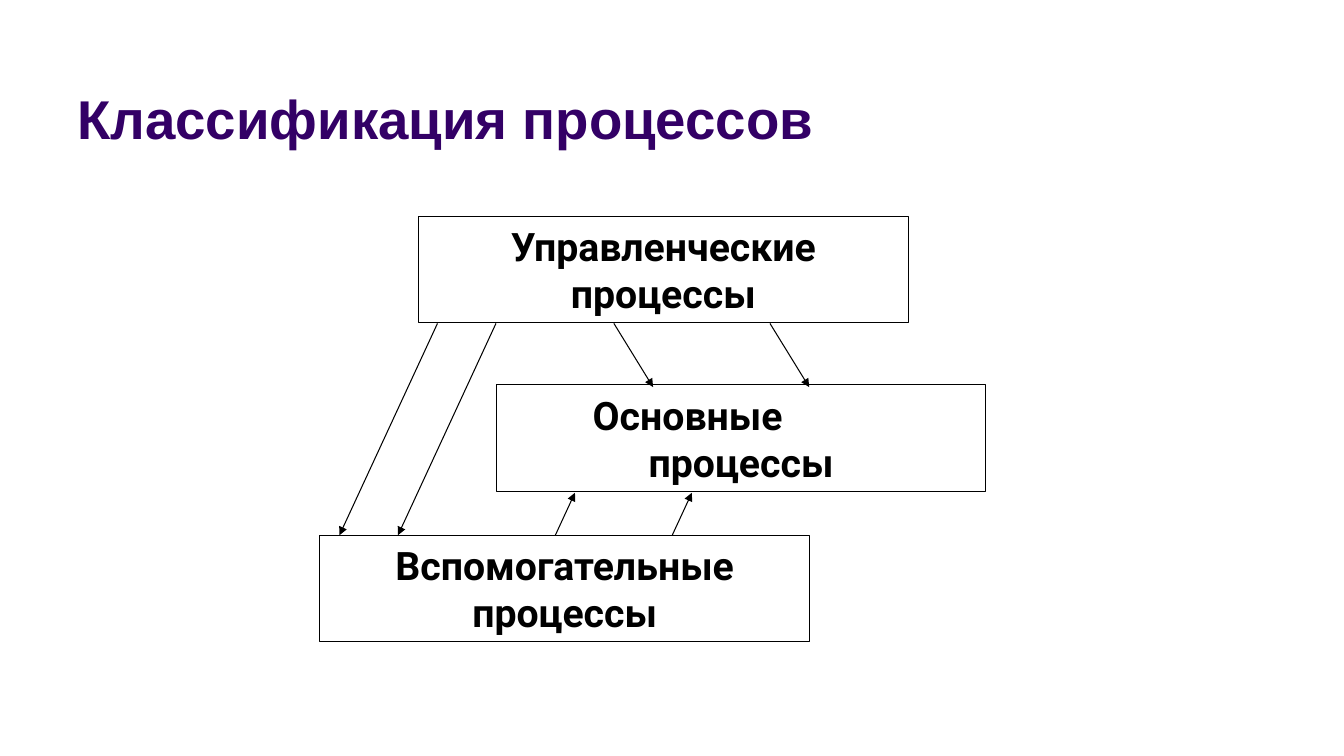
from lxml import etree
from pptx import Presentation
from pptx.dml.color import RGBColor
from pptx.enum.shapes import MSO_CONNECTOR, MSO_SHAPE
from pptx.enum.text import MSO_ANCHOR, PP_ALIGN
from pptx.oxml.ns import qn
from pptx.util import Pt

STRAIGHT = MSO_CONNECTOR.STRAIGHT
RECTANGLE = MSO_SHAPE.RECTANGLE
BOTTOM, MIDDLE = MSO_ANCHOR.BOTTOM, MSO_ANCHOR.MIDDLE
LEFT, CENTER = PP_ALIGN.LEFT, PP_ALIGN.CENTER

PURPLE = RGBColor(0x33, 0x00, 0x66)
BLACK = RGBColor(0x00, 0x00, 0x00)
WHITE = RGBColor(0xFF, 0xFF, 0xFF)

BOX_WIDTH, BOX_HEIGHT = 350, 75.8
LINE_WIDTH = 0.75

# Lines of text, left, top, and left indent of each line (None: centred)
PROCESS_BOXES = [
    (["Управленческие процессы"], 298.8, 154.8, [None]),
    (["Основные", "процессы"], 354.3, 275, [62, 102]),
    (["Вспомогательные процессы"], 228.3, 382.3, [None]),
]

# Start x of both arrows, horizontal run, start y, end y
ARROW_PAIRS = [
    ((312.5, 354.3), -70, 231, 382.3),
    ((396.7, 480.2), 14, 382.3, 352),
    ((438.5, 550), 28, 231, 276.5),
]


def write_line(paragraph, text, *, font, size, color, align=LEFT, indent=None):
    paragraph.text = text
    paragraph.alignment = align
    if indent is not None:
        paragraph._p.get_or_add_pPr().set("marL", str(Pt(indent)))
    run_font = paragraph.runs[0].font
    run_font.name = font
    run_font.size = Pt(size)
    run_font.bold = True
    run_font.color.rgb = color


def place_title(slide, text):
    title = slide.shapes.title
    title.left, title.top = Pt(48), Pt(9.4)
    title.width, title.height = Pt(792), Pt(102)
    frame = title.text_frame
    frame.vertical_anchor = BOTTOM
    frame.word_wrap = True
    write_line(frame.paragraphs[0], text, font="Arial", size=39, color=PURPLE)


def add_process_box(slide, lines, left, top, indents):
    box = slide.shapes.add_shape(
        RECTANGLE, Pt(left), Pt(top), Pt(BOX_WIDTH), Pt(BOX_HEIGHT))
    box.shadow.inherit = False
    box.fill.solid()
    box.fill.fore_color.rgb = WHITE
    box.line.color.rgb = BLACK
    box.line.width = Pt(LINE_WIDTH)
    frame = box.text_frame
    frame.word_wrap = True
    frame.vertical_anchor = MIDDLE
    for number, (text, indent) in enumerate(zip(lines, indents)):
        paragraph = frame.add_paragraph() if number else frame.paragraphs[0]
        write_line(paragraph, text, font="Roboto", size=28, color=BLACK,
                   align=CENTER if indent is None else LEFT, indent=indent)


def add_arrow(slide, start_x, start_y, end_x, end_y):
    arrow = slide.shapes.add_connector(
        STRAIGHT, Pt(start_x), Pt(start_y), Pt(end_x), Pt(end_y))
    arrow.line.color.rgb = BLACK
    arrow.line.width = Pt(LINE_WIDTH)
    outline = arrow.line._get_or_add_ln()
    etree.SubElement(outline, qn("a:tailEnd"), type="triangle")
    etree.SubElement(arrow._element.spPr, qn("a:effectLst"))


def main():
    presentation = Presentation()
    presentation.slide_width, presentation.slide_height = Pt(960), Pt(540)
    title_only = presentation.slide_layouts[5]
    slide = presentation.slides.add_slide(title_only)
    place_title(slide, "Классификация процессов")
    for lines, left, top, indents in PROCESS_BOXES:
        add_process_box(slide, lines, left, top, indents)
    for starts, run, start_y, end_y in ARROW_PAIRS:
        for start_x in starts:
            add_arrow(slide, start_x, start_y, start_x + run, end_y)
    presentation.save("out.pptx")


if __name__ == "__main__":
    main()
